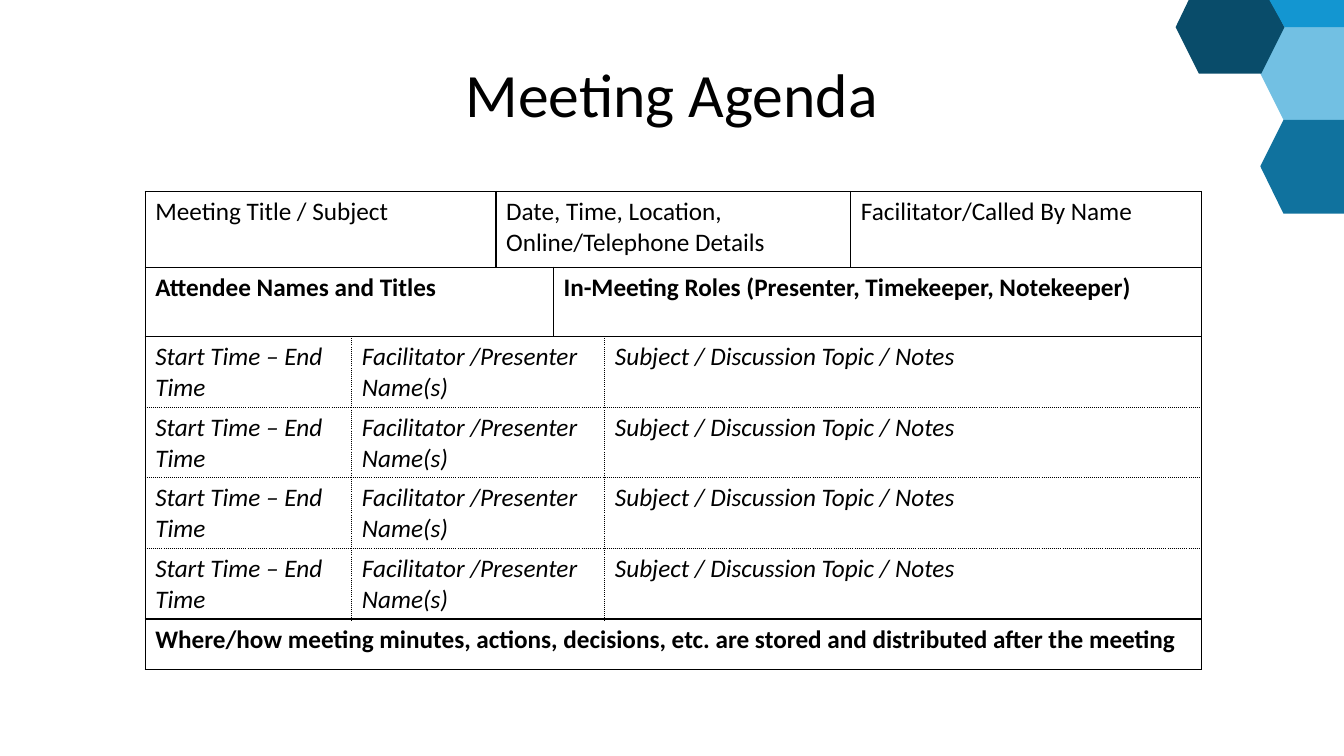
from itertools import product

from lxml.etree import SubElement
from pptx import Presentation
from pptx.dml.color import RGBColor as Color
from pptx.enum.text import MSO_ANCHOR as Anchor, PP_ALIGN as Align
from pptx.oxml.ns import qn
from pptx.util import Inches, Pt

WIDTH, HEIGHT = 13.33, 7.5
FONT = "Calibri"
COLORS = {
    "ink": "000000",
    "pale": "72C0E3",
    "mid": "10729E",
    "dark": "094C6A",
    "bright": "1396D1",
}

# Hexagons, with corners measured from the corner cluster's left and top
HEXAGONS = [
    ("pale", [(0.84, 0.73), (1.07, 0.26), (1.67, 0.26), (1.67, 1.19), (1.07, 1.19)]),
    ("mid", [(0.84, 1.65), (1.07, 1.19), (1.67, 1.19), (1.67, 2.12), (1.07, 2.12)]),
    ("dark", [(0, 0.27), (0.13, 0), (0.95, 0), (1.08, 0.27), (0.85, 0.73), (0.23, 0.73)]),
    ("bright", [(0.93, 0), (1.67, 0), (1.67, 0.27), (1.08, 0.27)]),
]

# Agenda rows: a list of (text, columns spanned), and the font format
COLUMNS = [2.05, 1.43, 0.57, 0.51, 2.44, 3.48]
ROW_HEIGHTS = [0.75, 0.69] + [0.5] * 5
TOPIC_ROWS = range(2, 6)
TOPIC = (
    [("Start Time – End Time", 1),
     ("Facilitator /Presenter Name(s)", 3),
     ("Subject / Discussion Topic / Notes", 2)],
    {"italic": True},
)
AGENDA = [
    ([("Meeting Title / Subject", 2),
      ("Date, Time, Location, Online/Telephone Details", 3),
      ("Facilitator/Called By Name", 1)], {}),
    ([("Attendee Names and Titles", 3),
      ("In-Meeting Roles (Presenter, Timekeeper, Notekeeper)", 3)], {"bold": True}),
    *[TOPIC for _ in TOPIC_ROWS],
    ([("Where/how meeting minutes, actions, decisions, etc. are stored "
       "and distributed after the meeting", 6)], {"bold": True}),
]


def write(frame, text, size, **formats):
    paragraph = frame.paragraphs[0]
    paragraph.text = text
    font = paragraph.font
    for name, value in {"name": FONT, "size": Pt(size), **formats}.items():
        setattr(font, name, value)
    font.color.rgb = Color.from_string(COLORS["ink"])
    return paragraph


def add_hexagons(slide, left, top):
    for color, corners in HEXAGONS:
        points = [(Inches(left + x), Inches(top + y)) for x, y in corners]
        builder = slide.shapes.build_freeform(*points[0])
        builder.add_line_segments(points[1:], close=True)
        shape = builder.convert_to_shape()
        shape.shadow.inherit = False
        shape.fill.solid()
        shape.fill.fore_color.rgb = Color.from_string(COLORS[color])
        shape.line.fill.background()


def add_title(slide, left, top, width, height):
    box = slide.shapes.add_textbox(*map(Inches, (left, top, width, height)))
    frame = box.text_frame
    frame.word_wrap = True
    frame.vertical_anchor = Anchor.MIDDLE
    write(frame, "Meeting Agenda", 44).alignment = Align.CENTER


def set_borders(cell, dotted_sides):
    properties = cell._tc.get_or_add_tcPr()
    for side in "LRTB":
        line = SubElement(properties, qn(f"a:ln{side}"), w=str(Pt(1)))
        fill = SubElement(line, qn("a:solidFill"))
        SubElement(fill, qn("a:srgbClr"), val=COLORS["ink"])
        SubElement(line, qn("a:prstDash"), val="dot" if side in dotted_sides else "solid")
    cell.fill.background()


def find_dotted_sides(row, first, last):
    """Lines between topic cells are dotted; the outline stays solid."""
    if row not in TOPIC_ROWS:
        return []
    inner = {
        "L": first > 0,
        "R": last < len(COLUMNS) - 1,
        "T": row > TOPIC_ROWS[0],
        "B": row < TOPIC_ROWS[-1],
    }
    return [side for side, is_inner in inner.items() if is_inner]


def add_agenda(slide, left, top):
    box = map(Inches, (left, top, sum(COLUMNS), sum(ROW_HEIGHTS)))
    table = slide.shapes.add_table(len(AGENDA), len(COLUMNS), *box).table
    table.first_row = table.horz_banding = False
    for column, width in zip(table.columns, COLUMNS):
        column.width = Inches(width)
    for row, height in zip(table.rows, ROW_HEIGHTS):
        row.height = Inches(height)

    for row, (entries, formats) in enumerate(AGENDA):
        first = 0
        for text, span in entries:
            last = first + span - 1
            cell = table.cell(row, first)
            if span > 1:
                cell.merge(table.cell(row, last))
            write(cell.text_frame, text, 18, **formats)
            for position in product([row], range(first, last + 1)):
                set_borders(table.cell(*position), find_dotted_sides(row, first, last))
            first = last + 1


def main():
    presentation = Presentation()
    presentation.slide_width = Inches(WIDTH)
    presentation.slide_height = Inches(HEIGHT)
    slide = presentation.slides.add_slide(presentation.slide_layouts[6])
    add_hexagons(slide, WIDTH - 1.67, 0)
    add_title(slide, WIDTH * 0.05, HEIGHT * 0.04, WIDTH * 0.9, 1.25)
    add_agenda(slide, 1.44, 1.9)
    presentation.save("out.pptx")


if __name__ == "__main__":
    main()
